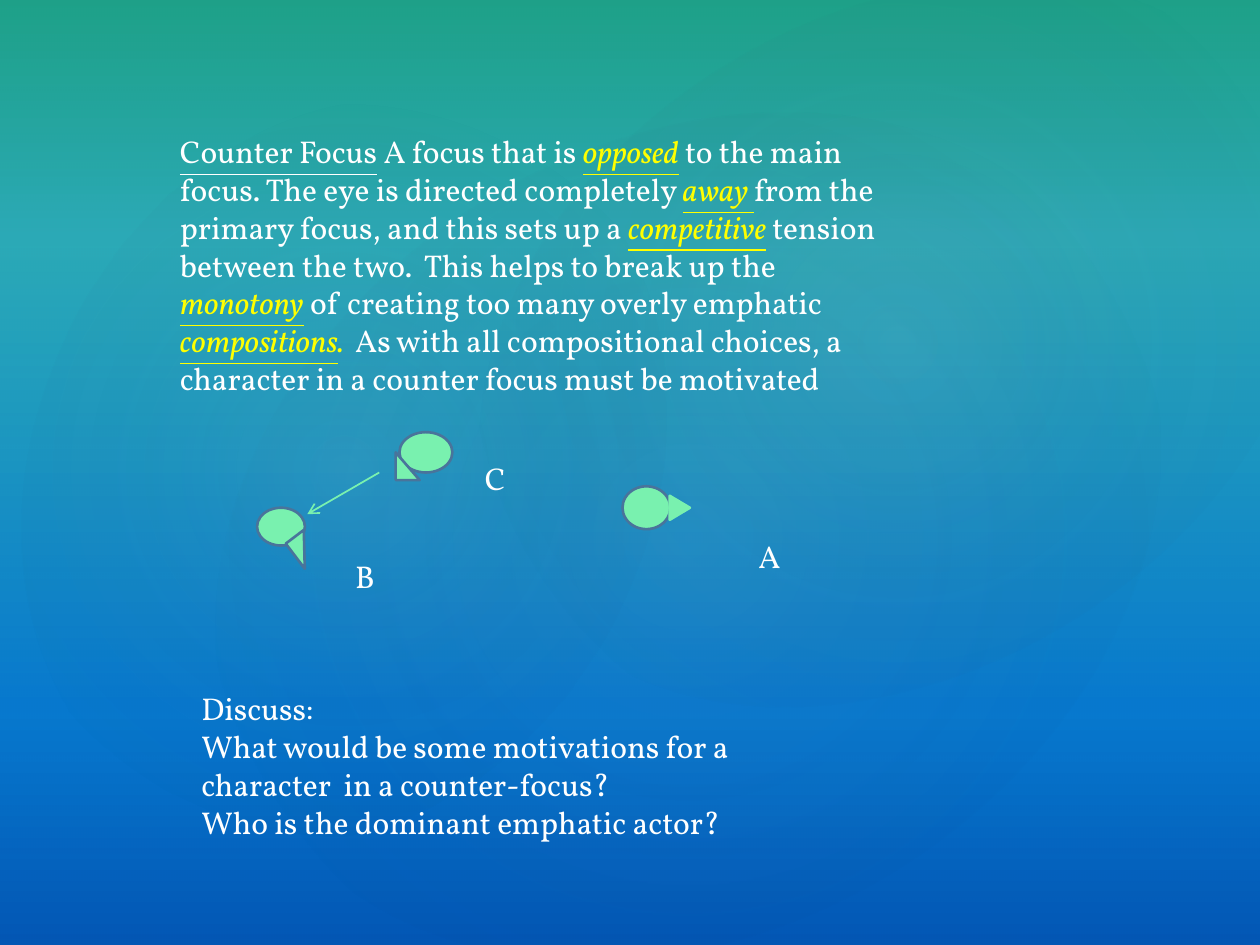
from lxml.etree import SubElement
from pptx import Presentation
from pptx.dml.color import RGBColor
from pptx.enum.shapes import MSO_CONNECTOR, MSO_SHAPE
from pptx.enum.text import MSO_AUTO_SIZE
from pptx.oxml import parse_xml
from pptx.oxml.ns import nsdecls, qn
from pptx.util import Inches, Pt

FONT = "Vollkorn"
WHITE = RGBColor(0xFF, 0xFF, 0xFF)
YELLOW = RGBColor(0xFF, 0xFF, 0x00)
MINT = RGBColor(0x79, 0xF1, 0xAF)
STEEL = RGBColor(0x49, 0x74, 0x9B)
GREEN = RGBColor(0x03, 0xD4, 0xA8)
AQUA = RGBColor(0x21, 0xD6, 0xE0)
BLUE = RGBColor(0x00, 0x87, 0xE6)
DEEP_BLUE = RGBColor(0x00, 0x5C, 0xBF)
BROWN = RGBColor(0x50, 0x46, 0x52)
NAVY = RGBColor(0x24, 0x28, 0x52)
GLOW = RGBColor(0xC4, 0xBC, 0xC6)

PLAIN = (WHITE, False, False)
LINED = (WHITE, False, True)
KEY = (YELLOW, True, True)

BACKGROUND = [(0, GREEN, 100), (25, AQUA, 100), (75, BLUE, 100), (100, DEEP_BLUE, 100)]
SHADE = [(0, BROWN, 36), (100, NAVY, 10)]
GLOWS = [
    ((1.5, 1.14, 7.92, 6.24), 328.7, 7),
    ((-0.3, 1.28, 6.06, 4.9), 294.3, 8),
    ((3.58, 0.13, 7.09, 5.2), 328.7, 8),
]

DEFINITION = [[
    ("Counter Focus", LINED),
    (" A focus that is ", PLAIN),
    ("opposed", KEY),
    (" to the main focus. The eye is directed completely ", PLAIN),
    ("away ", KEY),
    ("from the primary focus, and this sets up a ", PLAIN),
    ("competitive", KEY),
    (" tension between the two.  This helps to break up the ", PLAIN),
    ("monotony", KEY),
    (" of creating too many overly emphatic ", PLAIN),
    ("compositions", KEY),
    (".  ", (YELLOW, True, False)),
    ("As with all compositional choices, a character in a counter focus must be motivated", PLAIN),
]]
QUESTIONS = [[(line, PLAIN)] for line in (
    "Discuss:",
    "What would be some motivations for a character  in a counter-focus?",
    "Who is the dominant emphatic actor?",
)]

TEXTS = [
    ((1.33, 1, 5.92, 2.52), DEFINITION),
    ((5.92, 4.21, 0.42, 0.4), [[("A", PLAIN)]]),
    ((3.75, 3.59, 0.54, 0.4), [[("C", PLAIN)]]),
    ((2.72, 4.37, 0.51, 0.4), [[("B", PLAIN)]]),
    ((1.5, 5.42, 5.42, 1.31), QUESTIONS),
]

ACTORS = [
    (MSO_SHAPE.OVAL, (4.94, 3.86, 0.38, 0.34), 0, STEEL),
    (MSO_SHAPE.ISOSCELES_TRIANGLE, (5.3, 3.95, 0.19, 0.16), 90, MINT),
    (MSO_SHAPE.OVAL, (3.17, 3.43, 0.42, 0.32), 0, STEEL),
    (MSO_SHAPE.RIGHT_TRIANGLE, (3.14, 3.59, 0.19, 0.22), 0, STEEL),
    (MSO_SHAPE.OVAL, (2.04, 4.03, 0.38, 0.3), 0, STEEL),
    (MSO_SHAPE.RIGHT_TRIANGLE, (2.29, 4.27, 0.25, 0.18), 52.8, STEEL),
]
GAZE = (3.01, 3.75, 2.44, 4.08)


def set_gradient(fill, owner, stops, radial=False):
    fill.solid()
    solid = next(owner.iter(qn("a:solidFill")))
    gs = "".join(
        f'<a:gs pos="{pos * 1000}"><a:srgbClr val="{color}">'
        f'<a:alpha val="{alpha * 1000}"/></a:srgbClr></a:gs>'
        for pos, color, alpha in stops
    )
    if radial:
        way = '<a:path path="circle"><a:fillToRect l="50000" t="50000" r="50000" b="50000"/></a:path>'
    else:
        way = '<a:lin ang="5400000" scaled="0"/>'
    xml = f'<a:gradFill {nsdecls("a")} rotWithShape="1"><a:gsLst>{gs}</a:gsLst>{way}</a:gradFill>'
    solid.getparent().replace(solid, parse_xml(xml))


def add_shape(s, kind, box, rotation=0):
    sp = s.shapes.add_shape(kind, *map(Inches, box))
    sp.rotation = rotation
    sp.shadow.inherit = False
    sp.line.fill.background()
    return sp


def add_text(s, box, paragraphs):
    tf = s.shapes.add_textbox(*map(Inches, box)).text_frame
    tf.word_wrap = True
    tf.auto_size = MSO_AUTO_SIZE.SHAPE_TO_FIT_TEXT
    for i, runs in enumerate(paragraphs):
        p = tf.add_paragraph() if i else tf.paragraphs[0]
        for text, (color, italic, underline) in runs:
            r = p.add_run()
            r.text = text
            r.font.name = FONT
            r.font.size = Pt(18)
            r.font.color.rgb = color
            r.font.italic = italic
            r.font.underline = underline


def add_arrow(s, ends):
    line = s.shapes.add_connector(MSO_CONNECTOR.STRAIGHT, *map(Inches, ends))
    line.line.color.rgb = MINT
    line.line.width = Pt(1)
    SubElement(line.line._get_or_add_ln(), qn("a:tailEnd"), type="arrow")
    SubElement(line._element.spPr, qn("a:effectLst"))


def main():
    prs = Presentation()
    prs.slide_width, prs.slide_height = Inches(10), Inches(7.5)
    s = prs.slides.add_slide(prs.slide_layouts[6])
    set_gradient(s.background.fill, s._element, BACKGROUND)

    sp = add_shape(s, MSO_SHAPE.RECTANGLE, (0, 0, 10, 7.5))
    set_gradient(sp.fill, sp._element.spPr, SHADE)
    for box, rotation, alpha in GLOWS:
        sp = add_shape(s, MSO_SHAPE.OVAL, box, rotation)
        set_gradient(sp.fill, sp._element.spPr, [(0, GLOW, alpha), (58, NAVY, 0)], radial=True)

    for kind, box, rotation, outline in ACTORS:
        sp = add_shape(s, kind, box, rotation)
        sp.fill.solid()
        sp.fill.fore_color.rgb = MINT
        sp.line.color.rgb = outline
        sp.line.width = Pt(1.5)
    add_arrow(s, GAZE)
    for box, paragraphs in TEXTS:
        add_text(s, box, paragraphs)
    prs.save("out.pptx")


if __name__ == "__main__":
    main()
